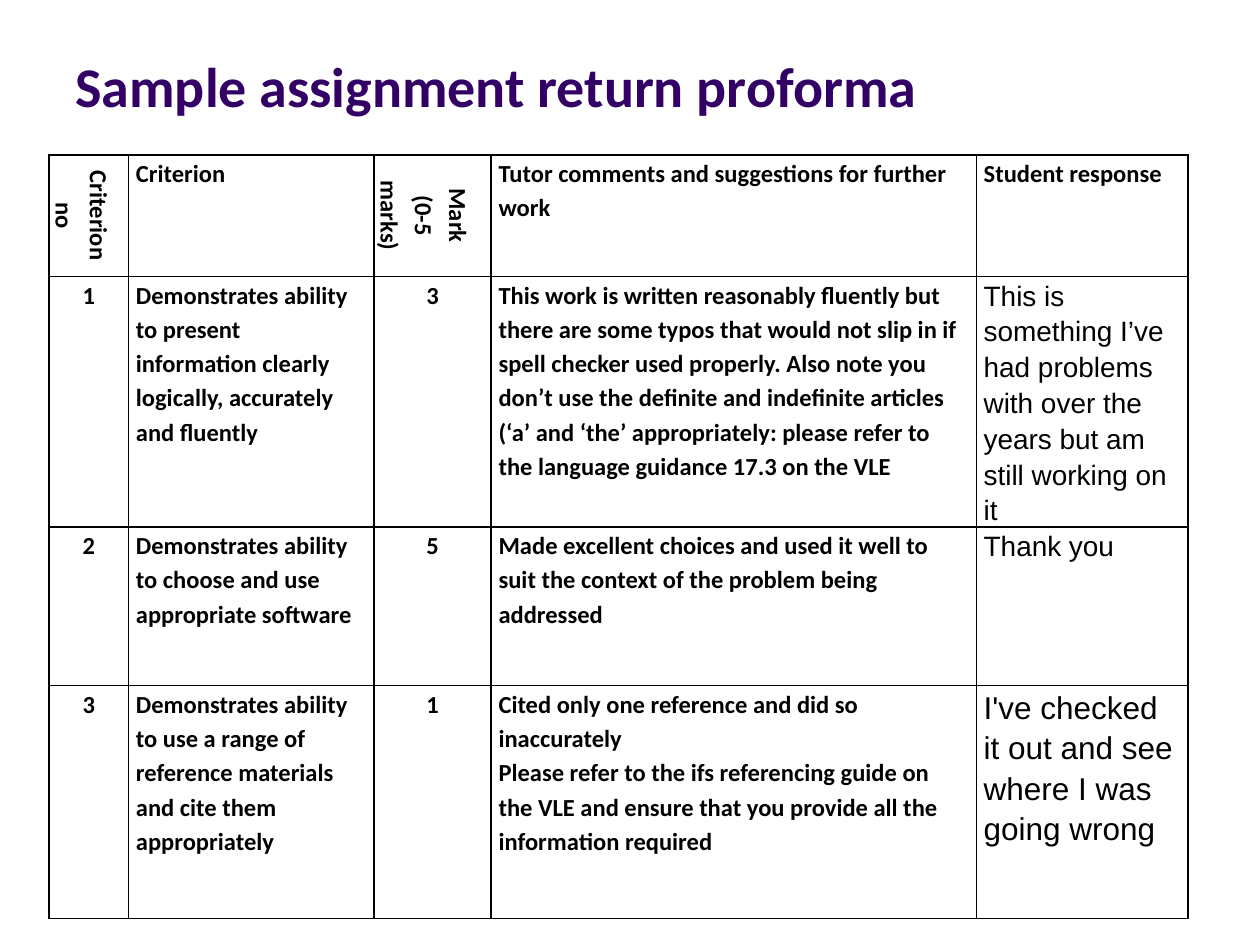
import pptx
import pptx.dml.color
import pptx.enum.text
import pptx.oxml
import pptx.oxml.ns
import pptx.util
from dataclasses import dataclass
from pptx.util import Cm, Pt


@dataclass(frozen=True)
class Theme:
    title_color: str = "330066"
    text_color: str = "000000"
    border_color: str = "000000"
    border_width: int = 12700
    title_font: tuple = ("Calibri", 32, True)
    body_font: tuple = ("Calibri", 14, True)
    reply_font: tuple = ("Arial", 16, False)
    large_reply_font: tuple = ("Arial", 18, False)
    line_spacing: float = 1.15


THEME = Theme()
ALIGN = pptx.enum.text.PP_ALIGN
ANCHOR = pptx.enum.text.MSO_ANCHOR

COLUMN_WIDTHS = (1.6, 4.95, 2.36, 9.78, 4.27)
ROW_HEIGHTS = (2.34, 4.5, 3.2, 4.7)
CENTERED_COLUMNS = (0, 2)
REPLY_COLUMN = 4
REPLY_FONTS = (THEME.body_font, THEME.reply_font, THEME.reply_font, THEME.large_reply_font)

ROWS = (
    ("Criterion no", "Criterion", "Mark\n(0-5 marks)",
     "Tutor comments and suggestions for further work", "Student response"),
    ("1",
     "Demonstrates ability to present information clearly logically, accurately and fluently",
     "3",
     "This work is written reasonably fluently but there are some typos that would not slip in "
     "if spell checker used properly. Also note you don’t use the definite and indefinite "
     "articles (‘a’ and ‘the’ appropriately: please refer to the language guidance 17.3 on the VLE",
     "This is something I’ve had problems with over the years but am still working on it"),
    ("2",
     "Demonstrates ability to choose and use appropriate software",
     "5",
     "Made excellent choices and used it well to suit the context of the problem being addressed",
     "Thank you"),
    ("3",
     "Demonstrates ability to use a range of reference materials and cite them appropriately",
     "1",
     "Cited only one reference and did so inaccurately\n"
     "Please refer to the ifs referencing guide on the VLE and ensure that you provide all the "
     "information required",
     "I've checked it out and see where I was going wrong"),
)


def set_values(target, values):
    for name, value in values.items():
        setattr(target, name, value)


def set_font(paragraph, style, color):
    name, size, bold = style
    for run in paragraph.runs:
        set_values(run.font, {"name": name, "size": Pt(size), "bold": bold})
        run.font.color.rgb = pptx.dml.color.RGBColor.from_string(color)


def add_borders(cell):
    properties = cell._tc.get_or_add_tcPr()
    namespace = pptx.oxml.ns.nsdecls("a")
    for side in ("lnL", "lnR", "lnT", "lnB"):
        properties.append(pptx.oxml.parse_xml(
            f'<a:{side} {namespace} w="{THEME.border_width}"><a:solidFill>'
            f'<a:srgbClr val="{THEME.border_color}"/></a:solidFill></a:{side}>'))


def fill_cell(cell, text, style, alignment, vertical):
    set_values(cell, {"margin_left": Cm(0.15), "margin_right": Cm(0.15),
                      "margin_top": 0, "margin_bottom": 0})
    add_borders(cell)
    cell.fill.background()
    if vertical:
        cell._tc.get_or_add_tcPr().set("vert", "vert")
    cell.text_frame.text = text
    for paragraph in cell.text_frame.paragraphs:
        set_values(paragraph, {"alignment": alignment, "line_spacing": THEME.line_spacing})
        set_font(paragraph, style, THEME.text_color)


def add_title(slide, left, top, width, height):
    shape = slide.shapes.add_textbox(left, top, width, height)
    set_values(shape.text_frame, {"word_wrap": True, "vertical_anchor": ANCHOR.BOTTOM,
                                  "text": "Sample assignment return proforma"})
    set_font(shape.text_frame.paragraphs[0], THEME.title_font, THEME.title_color)


def add_proforma(slide, left, top, width, height):
    table = slide.shapes.add_table(
        len(ROWS), len(COLUMN_WIDTHS), left, top, width, height).table
    set_values(table, {"first_row": False, "horz_banding": False})
    for column, share in zip(table.columns, COLUMN_WIDTHS):
        column.width = int(width * share / sum(COLUMN_WIDTHS))
    for row, share in zip(table.rows, ROW_HEIGHTS):
        row.height = int(height * share / sum(ROW_HEIGHTS))
    for row_index, texts in enumerate(ROWS):
        for column_index, text in enumerate(texts):
            centered = column_index in CENTERED_COLUMNS
            is_reply = column_index == REPLY_COLUMN
            fill_cell(table.cell(row_index, column_index), text,
                      REPLY_FONTS[row_index] if is_reply else THEME.body_font,
                      ALIGN.CENTER if centered else ALIGN.LEFT,
                      centered and row_index == 0)


def main():
    presentation = pptx.Presentation()
    set_values(presentation, {"slide_width": Cm(25.4), "slide_height": Cm(19.05)})
    slide = presentation.slides.add_slide(presentation.slide_layouts[6])
    add_proforma(slide, Cm(0.99), Cm(3.12), Cm(22.96), Cm(14.74))
    add_title(slide, Cm(1.27), Cm(0.69), Cm(20.96), Cm(1.83))
    presentation.save("out.pptx")


if __name__ == "__main__":
    main()
